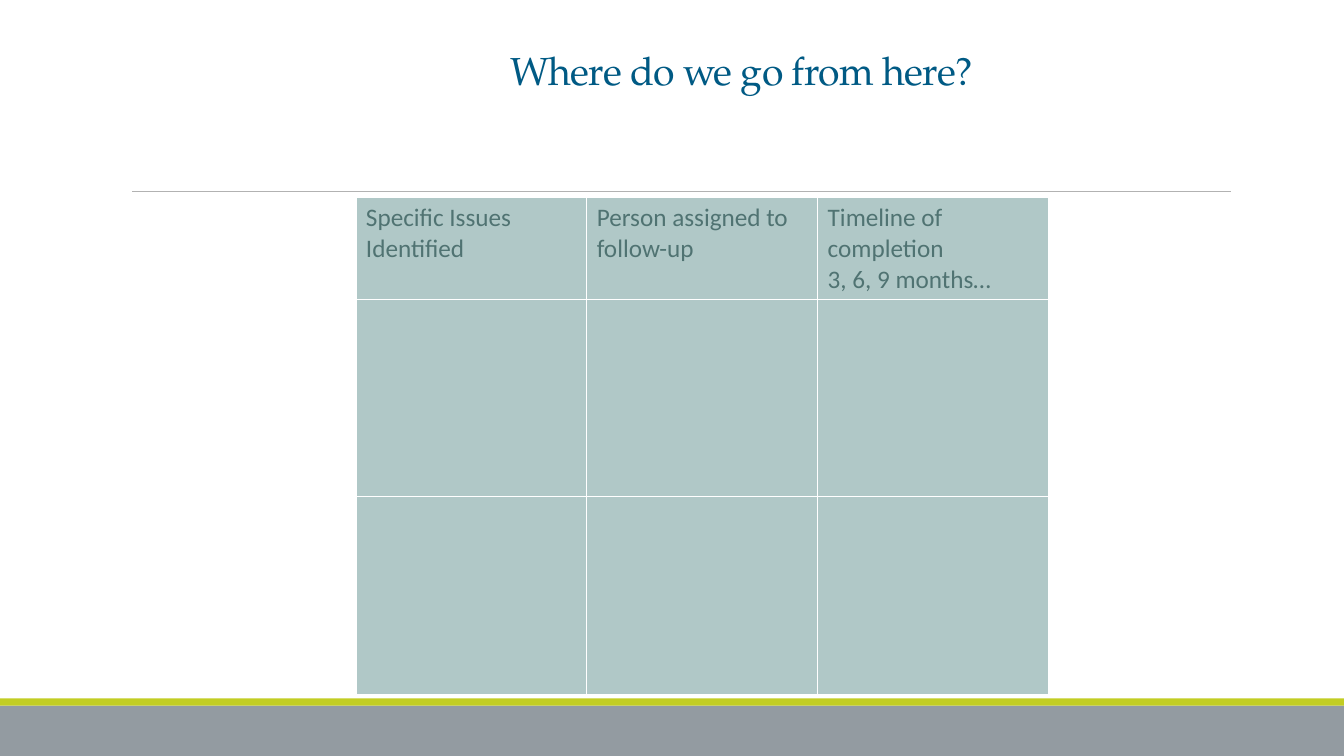
from lxml import etree
from pptx import Presentation
from pptx.dml.color import RGBColor
from pptx.enum.shapes import MSO_CONNECTOR, MSO_SHAPE
from pptx.enum.text import MSO_ANCHOR
from pptx.oxml.ns import qn
from pptx.util import Inches, Pt

# Content
TITLE = "Where do we go from here?"
ROWS = [
    ["Specific Issues Identified", "Person assigned to follow-up",
     "Timeline of completion\n3, 6, 9 months…"],
    ["", "", ""],
    ["", "", ""],
]
COLORS = {"title": "005A84", "cell": "B0C8C7", "text": "507372", "border": "FFFFFF",
          "rule": "B2B2B2", "footer": "939BA1", "accent": "C2CD23"}

# Layout in inches
WIDTH, HEIGHT = 13.33, 7.5
FOOTER_H, ACCENT_H = 0.5, 0.07
RULE_LEFT, RULE_RIGHT, RULE_Y = 1.31, 12.21, 1.9
TABLE_LEFT, TABLE_TOP, COL_W = 3.53, 1.96, 2.29
ROW_HEIGHTS = [1.01, 1.96, 1.96]


def rgb(name):
    return RGBColor.from_string(COLORS[name])


def add_band(slide, top, height, color):
    sp = slide.shapes.add_shape(MSO_SHAPE.RECTANGLE, 0, Inches(top),
                                Inches(WIDTH), Inches(height))
    sp.shadow.inherit = False
    sp.fill.solid()
    sp.fill.fore_color.rgb = rgb(color)
    sp.line.fill.background()


def set_borders(cell):
    tcPr = cell._tc.get_or_add_tcPr()
    for i, side in enumerate(("lnL", "lnR", "lnT", "lnB")):
        ln = etree.Element(qn(f"a:{side}"), w=str(Pt(1)))
        fill = etree.SubElement(ln, qn("a:solidFill"))
        etree.SubElement(fill, qn("a:srgbClr"), val=COLORS["border"])
        tcPr.insert(i, ln)


def style_run(r, font, size, color):
    r.font.name = font
    r.font.size = Pt(size)
    r.font.color.rgb = rgb(color)


def main():
    prs = Presentation()
    prs.slide_width, prs.slide_height = Inches(WIDTH), Inches(HEIGHT)
    slide = prs.slides.add_slide(prs.slide_layouts[6])

    # Footer bands
    footer_top = HEIGHT - FOOTER_H
    add_band(slide, footer_top, FOOTER_H, "footer")
    add_band(slide, footer_top - ACCENT_H, ACCENT_H, "accent")

    # Rule under the title
    rule = slide.shapes.add_connector(MSO_CONNECTOR.STRAIGHT, Inches(RULE_LEFT),
                                      Inches(RULE_Y), Inches(RULE_RIGHT), Inches(RULE_Y))
    rule.line.color.rgb = rgb("rule")
    rule.line.width = Pt(0.5)
    etree.SubElement(rule._element.spPr, qn("a:effectLst"))

    # Title
    box = slide.shapes.add_textbox(Inches(4.96), Inches(0.46), Inches(6.71), Inches(0.52))
    tf = box.text_frame
    tf.word_wrap = True
    tf.vertical_anchor = MSO_ANCHOR.BOTTOM
    tf.text = TITLE
    p = tf.paragraphs[0]
    p.line_spacing = 0.85
    r = p.runs[0]
    style_run(r, "TeX Gyre Pagella", 28, "title")
    r.font._element.set("spc", "-50")

    # Table
    n_cols = len(ROWS[0])
    table = slide.shapes.add_table(len(ROWS), n_cols, Inches(TABLE_LEFT), Inches(TABLE_TOP),
                                   Inches(COL_W * n_cols), Inches(sum(ROW_HEIGHTS))).table
    for col in table.columns:
        col.width = Inches(COL_W)
    for i, (row, height) in enumerate(zip(ROWS, ROW_HEIGHTS)):
        table.rows[i].height = Inches(height)
        for j, text in enumerate(row):
            cell = table.cell(i, j)
            cell.fill.solid()
            cell.fill.fore_color.rgb = rgb("cell")
            set_borders(cell)
            if not text:
                continue
            cell.text_frame.text = text
            for p in cell.text_frame.paragraphs:
                style_run(p.runs[0], "Calibri", 18, "text")
                p.runs[0].font.bold = False

    prs.save("out.pptx")


if __name__ == "__main__":
    main()
